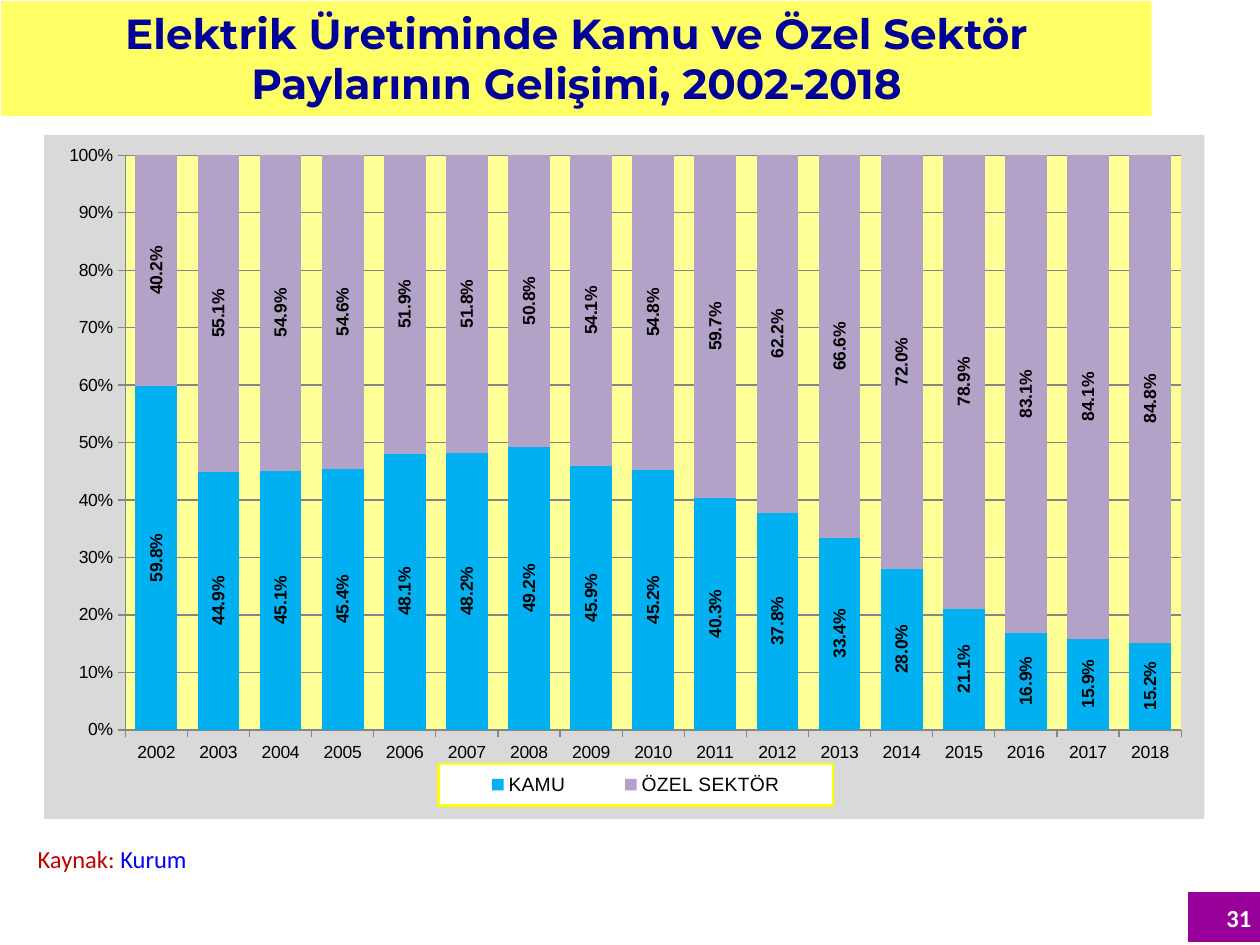
from dataclasses import dataclass

from lxml import etree
from pptx import Presentation
from pptx.chart.data import CategoryChartData
from pptx.dml.color import RGBColor
from pptx.enum.chart import XL_CHART_TYPE as ChartType
from pptx.enum.chart import XL_LABEL_POSITION as LabelPos
from pptx.enum.chart import XL_LEGEND_POSITION as LegendPos
from pptx.enum.chart import XL_TICK_MARK as Tick
from pptx.enum.shapes import MSO_SHAPE as Shape
from pptx.enum.text import MSO_ANCHOR as Anchor
from pptx.enum.text import MSO_AUTO_SIZE as AutoSize
from pptx.enum.text import PP_ALIGN as Align
from pptx.oxml import parse_xml
from pptx.oxml.ns import nsdecls, qn
from pptx.util import Inches, Pt


@dataclass(frozen=True)
class Theme:
    heading_font: str = "Montserrat"
    body_font: str = "Calibri"
    chart_font: str = "Arial"
    heading_size: int = 24
    body_size: int = 14
    legend_size: int = 11
    label_size: int = 10
    heading: str = "000099"
    heading_fill: str = "FFFF66"
    badge: str = "990099"
    source_label: str = "C00000"
    source_name: str = "0000FF"
    chart_fill: str = "D9D9D9"
    plot_fill: str = "FFFF97"
    legend_line: str = "FFFF00"
    grid: str = "868686"
    public: str = "00B0F0"
    private: str = "B3A2C7"
    white: str = "FFFFFF"
    black: str = "000000"


def rgb(code):
    return RGBColor.from_string(code)


def box_style(fill, line=None):
    """Chart XML for a filled area with an optional outline."""
    def solid(code):
        return f'<a:solidFill><a:srgbClr val="{code}"/></a:solidFill>'
    outline = solid(line) if line else "<a:noFill/>"
    return parse_xml(f'<c:spPr {nsdecls("c", "a")}>{solid(fill)}'
                     f'<a:ln w="19050">{outline}</a:ln></c:spPr>')


def manual_layout(x, y, w, h, inner=False):
    """Chart XML that places a part by fractions of the chart area."""
    layout = etree.Element(qn("c:layout"))
    manual = etree.SubElement(layout, qn("c:manualLayout"))
    settings = [("layoutTarget", "inner")] if inner else []
    settings += [("xMode", "edge"), ("yMode", "edge"),
                 ("x", x), ("y", y), ("w", w), ("h", h)]
    for tag, value in settings:
        etree.SubElement(manual, qn(f"c:{tag}")).set("val", str(value))
    return layout


class SlideBuilder:
    def __init__(self, deck, theme):
        self.theme = theme
        self.slide = deck.slides.add_slide(deck.slide_layouts[5])

    def style_font(self, font, size, name=None, color=None, bold=False):
        font.size = Pt(size)
        font.name = name or self.theme.chart_font
        font.color.rgb = rgb(color or self.theme.black)
        font.bold = bold

    def add_run(self, paragraph, text, size, name, color, bold=False):
        run = paragraph.add_run()
        run.text = text
        self.style_font(run.font, size, name, color, bold)

    def title(self, text, left, top, width, height):
        t = self.theme
        heading = self.slide.shapes.title
        heading.left, heading.top = Inches(left), Inches(top)
        heading.width, heading.height = Inches(width), Inches(height)
        heading.fill.solid()
        heading.fill.fore_color.rgb = rgb(t.heading_fill)
        frame = heading.text_frame
        frame.auto_size, frame.word_wrap = AutoSize.NONE, True
        frame.vertical_anchor = Anchor.TOP
        paragraph = frame.paragraphs[0]
        paragraph.alignment = Align.CENTER
        self.add_run(paragraph, text, t.heading_size, t.heading_font, t.heading, True)

    def page_badge(self, number, left, top, width, height):
        t = self.theme
        badge = self.slide.shapes.add_shape(
            Shape.RECTANGLE, Inches(left), Inches(top), Inches(width), Inches(height))
        badge.shadow.inherit = False
        badge.fill.solid()
        badge.fill.fore_color.rgb = rgb(t.badge)
        badge.line.color.rgb = rgb(t.white)
        badge.line.width = Pt(3)
        badge.text_frame.vertical_anchor = Anchor.MIDDLE
        paragraph = badge.text_frame.paragraphs[0]
        paragraph.alignment = Align.RIGHT
        self.add_run(paragraph, number, t.body_size, t.body_font, t.white, True)

    def text(self, runs, left, top, width, height):
        t = self.theme
        frame = self.slide.shapes.add_textbox(
            Inches(left), Inches(top), Inches(width), Inches(height)).text_frame
        frame.word_wrap = True
        for words, color in runs:
            self.add_run(frame.paragraphs[0], words, t.body_size, t.body_font, color)

    def share_chart(self, years, shares, left, top, width, height):
        """Stacked 100% columns; shares holds (name, values, colour)."""
        t = self.theme
        data = CategoryChartData(number_format="0.0%")
        data.categories = years
        for name, values, _ in shares:
            data.add_series(name, values)
        chart = self.slide.shapes.add_chart(
            ChartType.COLUMN_STACKED_100, Inches(left), Inches(top),
            Inches(width), Inches(height), data).chart
        chart.has_title = False
        self.style_font(chart.font, t.label_size, t.body_font)

        # Columns and upright labels
        plot = chart.plots[0]
        plot.gap_width, plot.overlap = 49, 100
        plot.vary_by_categories = False
        for series, (_, _, color) in zip(plot.series, shares):
            series.format.fill.solid()
            series.format.fill.fore_color.rgb = rgb(color)
            labels = series.data_labels
            labels.show_value = True
            labels.number_format, labels.number_format_is_linked = "0.0%", False
            labels.position = LabelPos.CENTER
            self.style_font(labels.font, t.label_size, bold=True)
            body = labels._element.find(f".//{qn('a:bodyPr')}")
            body.set("rot", "-5400000")
            body.set("vert", "horz")

        # Axes
        for axis in (chart.category_axis, chart.value_axis):
            axis.major_tick_mark, axis.minor_tick_mark = Tick.OUTSIDE, Tick.NONE
            axis.format.line.color.rgb = rgb(t.grid)
            self.style_font(axis.tick_labels.font, t.label_size)
        shares_axis = chart.value_axis
        shares_axis.minimum_scale, shares_axis.maximum_scale = 0, 1
        shares_axis.major_unit = 0.1
        shares_axis.tick_labels.number_format = "0%"
        shares_axis.tick_labels.number_format_is_linked = False
        shares_axis.has_major_gridlines = True
        shares_axis.major_gridlines.format.line.color.rgb = rgb(t.grid)

        # Legend
        chart.has_legend = True
        legend = chart.legend
        legend.position = LegendPos.BOTTOM
        legend.include_in_layout = False
        self.style_font(legend.font, t.legend_size)
        key = legend._element
        for old in key.findall(qn("c:layout")):
            key.remove(old)
        key.find(qn("c:legendPos")).addnext(manual_layout(0.34, 0.92, 0.34, 0.06))
        key.find(qn("c:txPr")).addprevious(box_style(t.white, t.legend_line))

        # Backgrounds and plot position
        space = chart._chartSpace
        space.find(qn("c:chart")).addnext(box_style(t.chart_fill))
        area = space.find(f".//{qn('c:plotArea')}")
        for old in area.findall(qn("c:layout")):
            area.remove(old)
        area.insert(0, manual_layout(0.07, 0.03, 0.91, 0.84, inner=True))
        area.append(box_style(t.plot_fill))


def main():
    theme = Theme()
    deck = Presentation()
    deck.slide_width, deck.slide_height = Inches(10), Inches(7.5)
    page = SlideBuilder(deck, theme)

    page.title("Elektrik Üretiminde Kamu ve Özel Sektör Paylarının Gelişimi, 2002-2018",
               0.01, 0.01, 9.13, 0.91)
    page.page_badge("31", 9.41, 7.06, 0.62, 0.44)
    page.text([("Kaynak: ", theme.source_label), ("Kurum", theme.source_name)],
              0.2, 6.65, 1.81, 0.34)

    # The private share is what the public share leaves
    public = [0.598, 0.449, 0.451, 0.454, 0.481, 0.482, 0.492, 0.459, 0.452,
              0.403, 0.378, 0.334, 0.280, 0.211, 0.169, 0.159, 0.152]
    private = [round(1 - share, 3) for share in public]
    years = [str(year) for year in range(2002, 2019)]
    page.share_chart(years, [("KAMU", public, theme.public),
                             ("ÖZEL SEKTÖR", private, theme.private)],
                     0.35, 1.07, 9.21, 5.43)
    deck.save("out.pptx")


if __name__ == "__main__":
    main()
